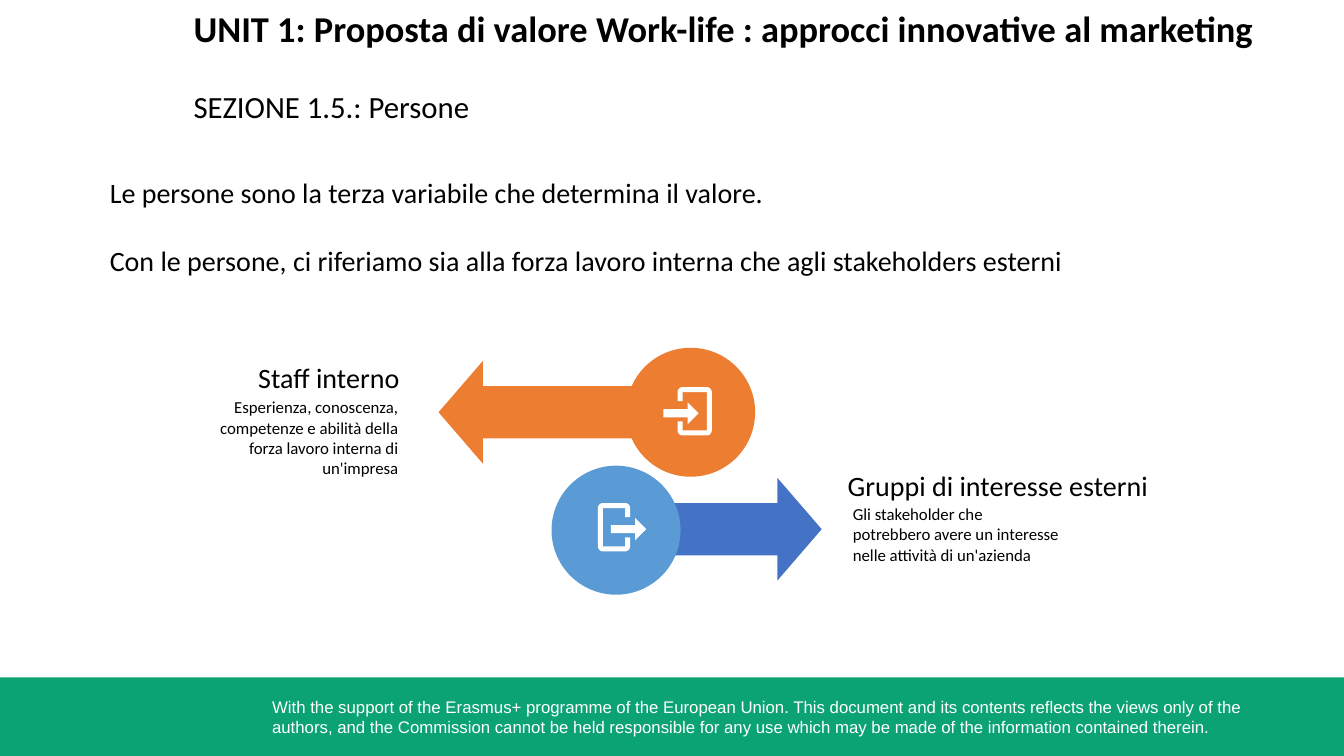
import math
import dataclasses

import pptx
import pptx.util
import pptx.dml.color
import pptx.enum.shapes
import pptx.enum.text

# The grid has square cells of one inch.
COLS, ROWS = 13.33, 7.5
SHAPE = pptx.enum.shapes.MSO_SHAPE
ALIGN = pptx.enum.text.PP_ALIGN


@dataclasses.dataclass(frozen=True)
class Theme:
    font: str = "Calibri"
    foot_font: str = "Arial"
    black: str = "000000"
    white: str = "FFFFFF"
    green: str = "0CA373"
    orange: str = "ED7D31"
    blue: str = "4472C4"
    sky: str = "5B9BD5"
    title: int = 26
    section: int = 22
    body: int = 20
    small: int = 12


THEME = Theme()


def cell(size):
    return pptx.util.Inches(size)


def color(code):
    return pptx.dml.color.RGBColor.from_string(code)


def paint(shape, code):
    shape.shadow.inherit = False
    shape.fill.solid()
    shape.fill.fore_color.rgb = color(code)
    shape.line.fill.background()


def block(shapes, kind, box, code):
    paint(shapes.add_shape(kind, *map(cell, box)), code)


def outline(shapes, paths, code):
    """Draw closed paths, each a list of grid points, as one shape."""
    first, *others = paths
    form = shapes.build_freeform(*map(cell, first[0]), scale=1.0)
    form.add_line_segments([tuple(map(cell, spot)) for spot in first[1:]])
    for path in others:
        form.move_to(*map(cell, path[0]))
        form.add_line_segments([tuple(map(cell, spot)) for spot in path[1:]])
    paint(form.convert_to_shape(), code)


def text(shapes, box, lines, size, align=ALIGN.LEFT, inset=(0.1, 0.05),
         bold=False, font=THEME.font, code=THEME.black, gap=0):
    """Add a text box; gap is the space between paragraphs in points."""
    frame = shapes.add_textbox(*map(cell, box)).text_frame
    frame.word_wrap = True
    frame.auto_size = pptx.enum.text.MSO_AUTO_SIZE.SHAPE_TO_FIT_TEXT
    frame.margin_left = frame.margin_right = cell(inset[0])
    frame.margin_top = frame.margin_bottom = cell(inset[1])
    for index, line in enumerate(lines):
        para = frame.add_paragraph() if index else frame.paragraphs[0]
        para.text = line
        para.alignment = align
        if index:
            para.space_before = pptx.util.Pt(gap)
        para.font.name = font
        para.font.size = pptx.util.Pt(size)
        para.font.bold = bold
        para.font.color.rgb = color(code)


def label(slide, head_box, head, note_box, note, align):
    group = slide.shapes.add_group_shape()
    text(group.shapes, head_box, [head], THEME.body, align)
    text(group.shapes, note_box, [note], THEME.small, align)


def arrow(slide, shaft, base, side, code):
    """Draw a shaft box and a head at column base; side is -1 for left."""
    block(slide.shapes, SHAPE.RECTANGLE, shaft, code)
    mid = shaft[1] + shaft[3] / 2
    head = [(base, mid - 0.51), (base + side * 0.44, mid), (base, mid + 0.51)]
    outline(slide.shapes, [head], code)


def arc(x, y, radius, start):
    """List points of a quarter turn from start degrees, going back."""
    turns = [math.radians(start - 15 * step) for step in range(7)]
    return [(x + radius * math.cos(turn), y + radius * math.sin(turn))
            for turn in turns]


def door(slide, back, mid, wide, side, tail):
    """Draw an open frame with its back at one column, and an arrow."""
    tall, thick, curve, gap = 0.24, 0.05, 0.05, 0.1
    upper = [(thick, thick - tall), (wide - thick, thick - tall),
             (wide - thick, -gap), (wide, -gap)]
    upper += arc(wide - curve, curve - tall, curve, 0)
    upper += arc(curve, curve - tall, curve, -90)
    lower = [(x, -y) for x, y in reversed(upper)]
    frame = [(back + side * x, mid + y) for x, y in upper + lower]
    dart = [(0, -0.04), (0.24, -0.04), (0.24, -0.11), (0.35, 0),
            (0.24, 0.11), (0.24, 0.04), (0, 0.04)]
    dart = [(tail + x, mid + 0.02 + y) for x, y in dart]
    outline(slide.shapes, [frame, dart], THEME.white)


def footer(slide):
    block(slide.shapes, SHAPE.RECTANGLE, (0, 6.72, COLS, ROWS - 6.72), THEME.green)
    text(slide.shapes, (2.6, 6.86, 10.42, 0.5),
         ["With the support of the Erasmus+ programme of the European Union. "
          "This document and its contents reflects the views only of the "
          "authors, and the Commission cannot be held responsible for any use "
          "which may be made of the information contained therein."],
         THEME.small, font=THEME.foot_font, code=THEME.white)


def main():
    deck = pptx.Presentation()
    deck.slide_width, deck.slide_height = cell(COLS), cell(ROWS)
    slide = deck.slides.add_slide(deck.slide_layouts[6])
    shapes = slide.shapes

    footer(slide)
    text(shapes, (1.92, 0.05, 11.3, 0.45),
         ["UNIT 1: Proposta di valore Work-life : approcci innovative al marketing"],
         THEME.title, inset=(0, 0.01), bold=True)
    text(shapes, (1.92, 0.86, 10.44, 0.39), ["SEZIONE 1.5.: Persone"],
         THEME.section, inset=(0, 0.01))
    text(shapes, (0.99, 1.69, 11.18, 1.11),
         ["Le persone sono la terza variabile che determina il valore.",
          "Con le persone, ci riferiamo sia alla forza lavoro interna che "
          "agli stakeholders esterni"],
         THEME.body, gap=24.4)

    arrow(slide, (4.74, 3.83, 1.79, 0.52), 4.79, -1, THEME.orange)
    block(shapes, SHAPE.OVAL, (6.21, 3.45, 1.28, 1.28), THEME.orange)
    arrow(slide, (6.59, 4.99, 1.32, 0.52), 7.71, 1, THEME.blue)
    block(shapes, SHAPE.OVAL, (5.47, 4.62, 1.28, 1.28), THEME.sky)
    door(slide, 7.06, 4.08, 0.34, -1, 6.58)
    door(slide, 5.93, 5.23, 0.32, 1, 6.06)

    label(slide, (2.43, 3.53, 1.63, 0.44), "Staff interno",
          (1.78, 3.89, 2.27, 0.91),
          "Esperienza, conoscenza, competenze e abilità della forza lavoro "
          "interna di un'impresa", ALIGN.RIGHT)
    label(slide, (8.31, 4.6, 3.46, 0.44), "Gruppi di interesse esterni",
          (8.36, 4.95, 2.27, 0.71),
          "Gli stakeholder che potrebbero avere un interesse nelle attività "
          "di un'azienda", ALIGN.LEFT)
    deck.save("out.pptx")


if __name__ == "__main__":
    main()
